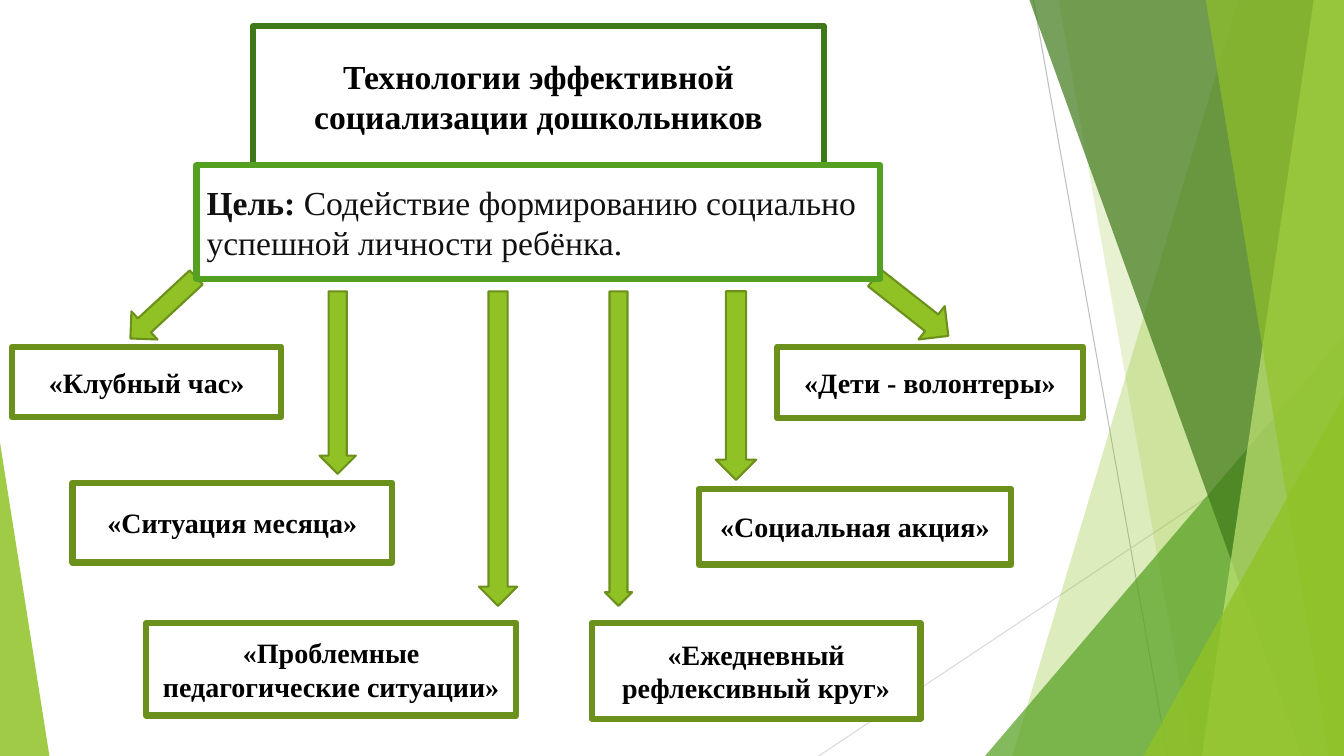
from dataclasses import dataclass

from lxml import etree
from pptx import Presentation
from pptx.dml.color import RGBColor
from pptx.enum.shapes import MSO_CONNECTOR, MSO_SHAPE
from pptx.enum.text import MSO_ANCHOR, MSO_AUTO_SIZE, PP_ALIGN
from pptx.oxml.ns import qn
from pptx.shapes.autoshape import Shape
from pptx.slide import Slide
from pptx.util import Pt

PX = 9144  # 100 px to the inch
WIDTH, HEIGHT = 1333, 750
FONT = "Times New Roman"
TITLE_ONLY = 5

RECTANGLE = MSO_SHAPE.RECTANGLE
TRIANGLE = MSO_SHAPE.ISOSCELES_TRIANGLE
DOWN_ARROW = MSO_SHAPE.DOWN_ARROW
STRAIGHT = MSO_CONNECTOR.STRAIGHT
MIDDLE = MSO_ANCHOR.MIDDLE
NO_AUTOFIT = MSO_AUTO_SIZE.NONE
LEFT, CENTER = PP_ALIGN.LEFT, PP_ALIGN.CENTER

WHITE = RGBColor(0xFF, 0xFF, 0xFF)
BLACK = RGBColor(0x00, 0x00, 0x00)
INK = RGBColor(0x11, 0x11, 0x11)
LIME = RGBColor(0x90, 0xC2, 0x26)
PALE_LIME = RGBColor(0xC0, 0xE4, 0x74)
OLIVE = RGBColor(0x6B, 0x90, 0x1C)
GREEN = RGBColor(0x54, 0xA0, 0x21)
DARK_GREEN = RGBColor(0x3F, 0x78, 0x19)
GRAY = RGBColor(0xBF, 0xBF, 0xBF)
LIGHT_GRAY = RGBColor(0xD9, 0xD9, 0xD9)


@dataclass(frozen=True)
class Panel:
    """Full-height panel reaching the right edge, with a slanted left side."""
    top_x: int
    bottom_x: int
    color: RGBColor
    opacity: int


@dataclass(frozen=True)
class Corner:
    """Triangle standing on the bottom edge, apex at 0 (left) or 1 (right)."""
    left: int
    top: int
    width: int
    apex: int
    color: RGBColor
    opacity: int


@dataclass(frozen=True)
class Ray:
    start: tuple[int, int]
    end: tuple[int, int]
    color: RGBColor


@dataclass(frozen=True)
class Box:
    left: int
    top: int
    width: int
    height: int
    text: str


@dataclass(frozen=True)
class Arrow:
    left: int
    top: int
    width: int
    height: int
    rotation: float = 0
    shaft: float = 0.5


RAYS = [
    Ray((1025, 0), (1158, HEIGHT), GRAY),
    Ray((WIDTH, 403), (812, HEIGHT), LIGHT_GRAY),
]
FACETS = [
    Panel(1228, 1004, LIME, 30),
    Panel(1050, 1183, LIME, 20),
    Corner(977, 333, 356, 1, GREEN, 72),
    Panel(1021, 1291, DARK_GREEN, 70),
    Panel(1303, 1192, PALE_LIME, 70),
    Panel(1196, 1318, LIME, 65),
    Corner(1134, 393, 199, 1, LIME, 80),
    Corner(0, 439, 49, 0, LIME, 85),
]
TITLE = Box(251, 26, 566, 138, "Технологии эффективной социализации дошкольников")
GOAL = Box(195, 164, 678, 113,
           "Содействие формированию социально\nуспешной личности ребёнка.")
TECHNOLOGIES = [
    Box(12, 344, 267, 70, "«Клубный час»"),
    Box(72, 479, 317, 79, "«Ситуация месяца»"),
    Box(771, 344, 303, 71, "«Дети - волонтеры»"),
    Box(145, 618, 367, 92, "«Проблемные педагогические ситуации»"),
    Box(587, 618, 326, 95, "«Ежедневный рефлексивный круг»"),
    Box(693, 485, 310, 75, "«Социальная акция»"),
]
ARROWS = [
    Arrow(710, 289, 40, 187),
    Arrow(883, 258, 42, 93, rotation=308.2),
    Arrow(317, 289, 36, 181),
    Arrow(600, 289, 27, 312, shaft=0.66),
    Arrow(475, 289, 38, 312),
    Arrow(143, 261, 38, 89, rotation=47.1),
]


def add_preset(slide: Slide, kind: MSO_SHAPE, left: int, top: int,
               width: int, height: int) -> Shape:
    return slide.shapes.add_shape(kind, left * PX, top * PX, width * PX, height * PX)


def paint(shape: Shape, fill: RGBColor, line: RGBColor, weight: float) -> None:
    shape.fill.solid()
    shape.fill.fore_color.rgb = fill
    shape.line.color.rgb = line
    shape.line.width = Pt(weight)
    shape.shadow.inherit = False


def paint_glass(shape: Shape, color: RGBColor, opacity: int) -> None:
    """Fill without outline, opacity in percent."""
    shape.fill.solid()
    shape.fill.fore_color.rgb = color
    shape.line.fill.background()
    shape.shadow.inherit = False
    tint = shape._element.spPr.find(f"{qn('a:solidFill')}/{qn('a:srgbClr')}")
    etree.SubElement(tint, qn("a:alpha")).set("val", str(opacity * 1000))


def write_text(shape: Shape, text: str, *, size: int, color: RGBColor = BLACK,
               bold: bool = True, align: PP_ALIGN = CENTER, lead: str = "") -> None:
    """Write one paragraph, with an optional bold lead before the text."""
    frame = shape.text_frame
    frame.word_wrap = True
    frame.auto_size = NO_AUTOFIT
    frame.vertical_anchor = MIDDLE
    para = frame.paragraphs[0]
    para.alignment = align
    pieces = [(lead, True)] if lead else []
    first, *others = text.split("\n")
    pieces += [(first, bold)] + [("\n" + other, bold) for other in others]
    for piece, is_bold in pieces:
        if piece.startswith("\n"):
            para.add_line_break()
        span = para.add_run()
        span.text = piece.lstrip("\n")
        span.font.name = FONT
        span.font.size = Pt(size)
        span.font.bold = is_bold
        span.font.color.rgb = color


def draw_ray(slide: Slide, ray: Ray) -> None:
    ends = [value * PX for value in ray.start + ray.end]
    connector = slide.shapes.add_connector(STRAIGHT, *ends)
    connector.line.color.rgb = ray.color
    connector.line.width = Pt(0.75)
    etree.SubElement(connector._element.spPr, qn("a:effectLst"))


def draw_facet(slide: Slide, facet: Panel | Corner) -> None:
    if isinstance(facet, Panel):
        outline = slide.shapes.build_freeform(facet.top_x, 0, scale=PX)
        outline.add_line_segments([(WIDTH, 0), (WIDTH, HEIGHT), (facet.bottom_x, HEIGHT)])
        shape = outline.convert_to_shape()
    else:
        shape = add_preset(slide, TRIANGLE, facet.left, facet.top,
                           facet.width, HEIGHT - facet.top)
        shape.adjustments[0] = facet.apex
    paint_glass(shape, facet.color, facet.opacity)


def draw_title(slide: Slide, box: Box) -> None:
    title = slide.shapes.title
    title.left, title.top = box.left * PX, box.top * PX
    title.width, title.height = box.width * PX, box.height * PX
    title.fill.solid()
    title.fill.fore_color.rgb = WHITE
    title.line.color.rgb = DARK_GREEN
    title.line.width = Pt(4.5)
    write_text(title, box.text, size=24)


def draw_box(slide: Slide, box: Box, line: RGBColor) -> Shape:
    shape = add_preset(slide, RECTANGLE, box.left, box.top, box.width, box.height)
    paint(shape, WHITE, line, 4.5)
    return shape


def draw_arrow(slide: Slide, arrow: Arrow) -> None:
    shape = add_preset(slide, DOWN_ARROW, arrow.left, arrow.top, arrow.width, arrow.height)
    shape.adjustments[0] = arrow.shaft
    shape.rotation = arrow.rotation
    paint(shape, LIME, OLIVE, 1.5)


def main() -> None:
    deck = Presentation()
    deck.slide_width, deck.slide_height = WIDTH * PX, HEIGHT * PX
    slide = deck.slides.add_slide(deck.slide_layouts[TITLE_ONLY])
    draw_title(slide, TITLE)
    for ray in RAYS:
        draw_ray(slide, ray)
    for facet in FACETS:
        draw_facet(slide, facet)
    for technology in TECHNOLOGIES:
        write_text(draw_box(slide, technology, OLIVE), technology.text, size=20)
    for arrow in ARROWS:
        draw_arrow(slide, arrow)
    write_text(draw_box(slide, GOAL, GREEN), GOAL.text, size=24, color=INK,
               bold=False, align=LEFT, lead="Цель: ")
    deck.save("out.pptx")


if __name__ == "__main__":
    main()
